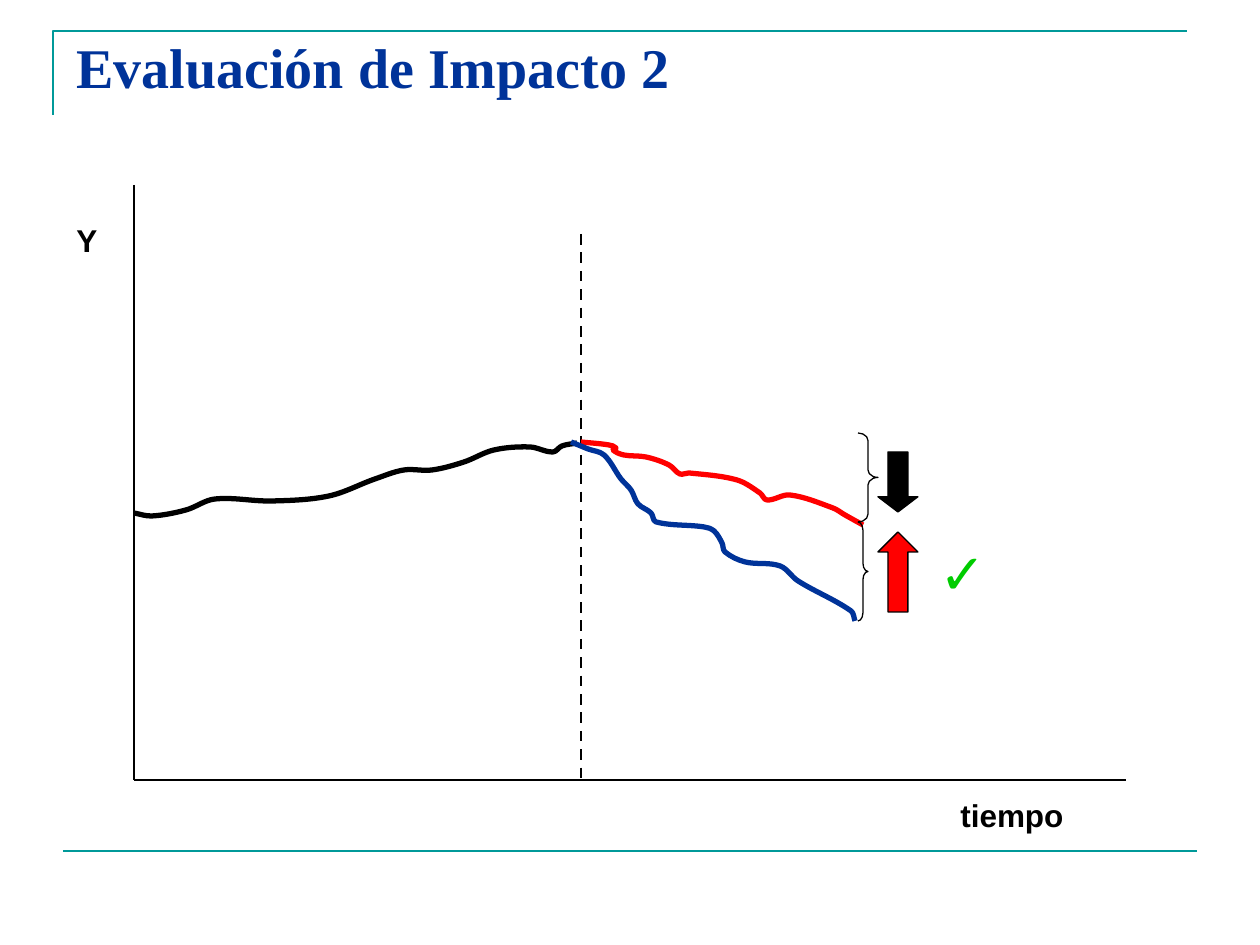
"""Build the slide 'Evaluación de Impacto 2' with its outcome curves over time."""
import math

from pptx import Presentation
from pptx import util as u
from pptx.dml.color import RGBColor
from pptx.enum import dml, shapes, text
from pptx.oxml.ns import qn

PX = u.Inches(1) / 126
BLACK = RGBColor(0, 0, 0)
RED = RGBColor(255, 0, 0)
BLUE = RGBColor(0, 0x33, 0x99)
TEAL = RGBColor(0, 0x99, 0x99)
GREEN = RGBColor(0, 0xCC, 0)

PAGE_WIDTH, PAGE_HEIGHT = 1260, 945
RULE_WIDTH = 1134
FRAME_LEFT, FRAME_TOP, FRAME_BOTTOM = 53, 31, 115
FOOTER_LEFT, FOOTER_Y = 63, 851
TEXT_LEFT, LABEL_HEIGHT = 64, 50
AXIS_X, AXIS_TOP, AXIS_Y, AXIS_RIGHT = 134, 185, 780, 1126
EVENT_X, EVENT_TOP = 581, 234
BRACE_X, ARROW_X, ARROW_WIDTH, CHECK_X = 858, 878, 40, 927
BRACE_TOP, BRACE_MIDDLE, BRACE_BOTTOM = 433, 522, 621
DOWN_TOP, DOWN_HEIGHT = 452, 60
UP_TOP, UP_HEIGHT = 532, 80

HISTORY = [(AXIS_X, 513), (152, 516), (186, 510), (215, 499), (272, 501), (329, 496),
           (375, 479), (404, 470), (432, 470), (464, 462), (494, 450), (530, 447),
           (553, 452), (562, 446), (577, 443)]
UPPER_TREND = [(EVENT_X, 442), (609, 445), (616, 448), (613, 450), (624, 455), (646, 457),
               (669, 465), (680, 474), (689, 473), (737, 480), (760, 493), (767, 500),
               (790, 495), (833, 508), (845, 515), (863, 525)]
LOWER_TREND = [(571, 442), (588, 449), (604, 455), (621, 479), (631, 490), (638, 504),
               (651, 513), (656, 522), (704, 527), (714, 531), (722, 543), (725, 552),
               (745, 562), (780, 566), (798, 581), (851, 611), (855, 621)]


def px(*lengths):
    """Turn pixel lengths into EMU."""
    return [round(length * PX) for length in lengths]


def write(box, words, size=18, font="Arial", color=BLACK):
    """Write one bold, left-aligned line of text at the top of a shape."""
    frame = box.text_frame
    frame.word_wrap = True
    frame.auto_size = text.MSO_AUTO_SIZE.NONE
    frame.vertical_anchor = text.MSO_ANCHOR.TOP
    para = frame.paragraphs[0]
    para.alignment = text.PP_ALIGN.LEFT
    span = para.add_run()
    span.text = words
    span.font.size = u.Pt(size)
    span.font.name = font
    span.font.bold = True
    span.font.color.rgb = color


def add_title(page, words, area):
    """Place and format the title placeholder."""
    title = page.shapes.title
    title.left, title.top, title.width, title.height = px(*area)
    write(title, words, size=32, font="Times New Roman", color=BLUE)


def add_label(page, words, area, **style):
    """Add a text box."""
    write(page.shapes.add_textbox(*px(*area)), words, **style)


def set_line(shape, color, width):
    """Give a shape or connector its line colour and width in points."""
    shape.line.color.rgb = color
    shape.line.width = u.Pt(width)


def add_line(page, start, end, color=BLACK, width=0.75, dash=None):
    """Add a straight connector without a shadow."""
    line = page.shapes.add_connector(shapes.MSO_CONNECTOR.STRAIGHT, *px(*start, *end))
    set_line(line, color, width)
    line.line.dash_style = dash
    stroke = line.line._get_or_add_ln()
    stroke.addnext(stroke.makeelement(qn("a:effectLst"), {}))


def add_outline(page, points, color, width):
    """Add an open, unfilled freeform through the points."""
    start, *others = [px(*point) for point in points]
    builder = page.shapes.build_freeform(*start)
    builder.add_line_segments(others, close=False)
    outline = builder.convert_to_shape()
    outline.shadow.inherit = False
    outline.fill.background()
    set_line(outline, color, width)
    return outline


def smooth_points(knots):
    """Return the first knot, then two Bézier handles and a knot for each segment."""
    padded = [knots[0], *knots, knots[-1]]
    points = [knots[0]]
    for before, start, end, after in zip(padded, padded[1:], padded[2:], padded[3:]):
        reach = math.dist(start, end) / 3
        leave = reach / math.dist(before, end)
        arrive = reach / math.dist(start, after)
        points += [
            [s + (e - b) * leave for b, s, e in zip(before, start, end)],
            [e - (a - s) * arrive for s, e, a in zip(start, end, after)],
            end,
        ]
    return points


def add_curve(page, knots, color):
    """Add a smooth freeform through the knots."""
    curve = add_outline(page, smooth_points(knots), color, 3)
    steps = list(curve._element.iter(qn("a:lnTo")))
    for triple in zip(steps[::3], steps[1::3], steps[2::3]):
        bezier = triple[0].makeelement(qn("a:cubicBezTo"), {})
        triple[0].addprevious(bezier)
        for step in triple:
            bezier.append(step[0])
            step.getparent().remove(step)


def add_preset(page, kind, area, adjustment, fill=None):
    """Add a thinly outlined preset shape, bent or tapered by its adjustment."""
    shape = page.shapes.add_shape(kind, *px(*area))
    shape.shadow.inherit = False
    slot = 0 if kind == shapes.MSO_SHAPE.RIGHT_BRACE else 1
    shape.adjustments[slot] = adjustment
    if fill is None:
        shape.fill.background()
    else:
        shape.fill.solid()
        shape.fill.fore_color.rgb = fill
    set_line(shape, BLACK, 0.75)


def add_frame(page):
    """Draw the corner rule around the title and the rule above the footer."""
    corner = [(FRAME_LEFT, FRAME_BOTTOM), (FRAME_LEFT, FRAME_TOP),
              (FRAME_LEFT + RULE_WIDTH, FRAME_TOP)]
    add_outline(page, corner, TEAL, 1.5)
    add_line(page, (FOOTER_LEFT, FOOTER_Y), (FOOTER_LEFT + RULE_WIDTH, FOOTER_Y), TEAL, 1.5)


def add_axes(page):
    """Draw both axes, their labels and the dashed moment of the intervention."""
    origin = (AXIS_X, AXIS_Y)
    add_line(page, (AXIS_X, AXIS_TOP), origin)
    add_line(page, origin, (AXIS_RIGHT, AXIS_Y))
    add_line(page, (EVENT_X, EVENT_TOP), (EVENT_X, AXIS_Y), width=1.5, dash=dml.MSO_LINE.DASH)
    add_label(page, "tiempo", (948, 790, 139, LABEL_HEIGHT))
    add_label(page, "Y", (TEXT_LEFT, 215, 59, LABEL_HEIGHT))


def add_effects(page):
    """Mark the two gaps with braces, arrows and the check for the right one."""
    kinds = shapes.MSO_SHAPE
    braces = [(BRACE_TOP, BRACE_MIDDLE, 20, 0.38), (BRACE_MIDDLE, BRACE_BOTTOM, 10, 0.82)]
    for top, bottom, width, bend in braces:
        add_preset(page, kinds.RIGHT_BRACE, (BRACE_X, top, width, bottom - top), bend)
    arrows = [(kinds.DOWN_ARROW, DOWN_TOP, DOWN_HEIGHT, 0.38, BLACK),
              (kinds.UP_ARROW, UP_TOP, UP_HEIGHT, 0.5, RED)]
    for kind, top, height, head, fill in arrows:
        add_preset(page, kind, (ARROW_X, top, ARROW_WIDTH, height), head, fill)
    add_label(page, "✓", (CHECK_X, UP_TOP, 159, UP_HEIGHT), size=32, color=GREEN)


def main():
    """Build and save the deck."""
    deck = Presentation()
    deck.slide_width, deck.slide_height = px(PAGE_WIDTH, PAGE_HEIGHT)
    page = deck.slides.add_slide(deck.slide_layouts[5])
    add_frame(page)
    add_title(page, "Evaluación de Impacto 2", (TEXT_LEFT, 26, RULE_WIDTH, 97))
    add_axes(page)
    for knots, color in ((HISTORY, BLACK), (UPPER_TREND, RED), (LOWER_TREND, BLUE)):
        add_curve(page, knots, color)
    add_effects(page)
    deck.save("out.pptx")


if __name__ == "__main__":
    main()
